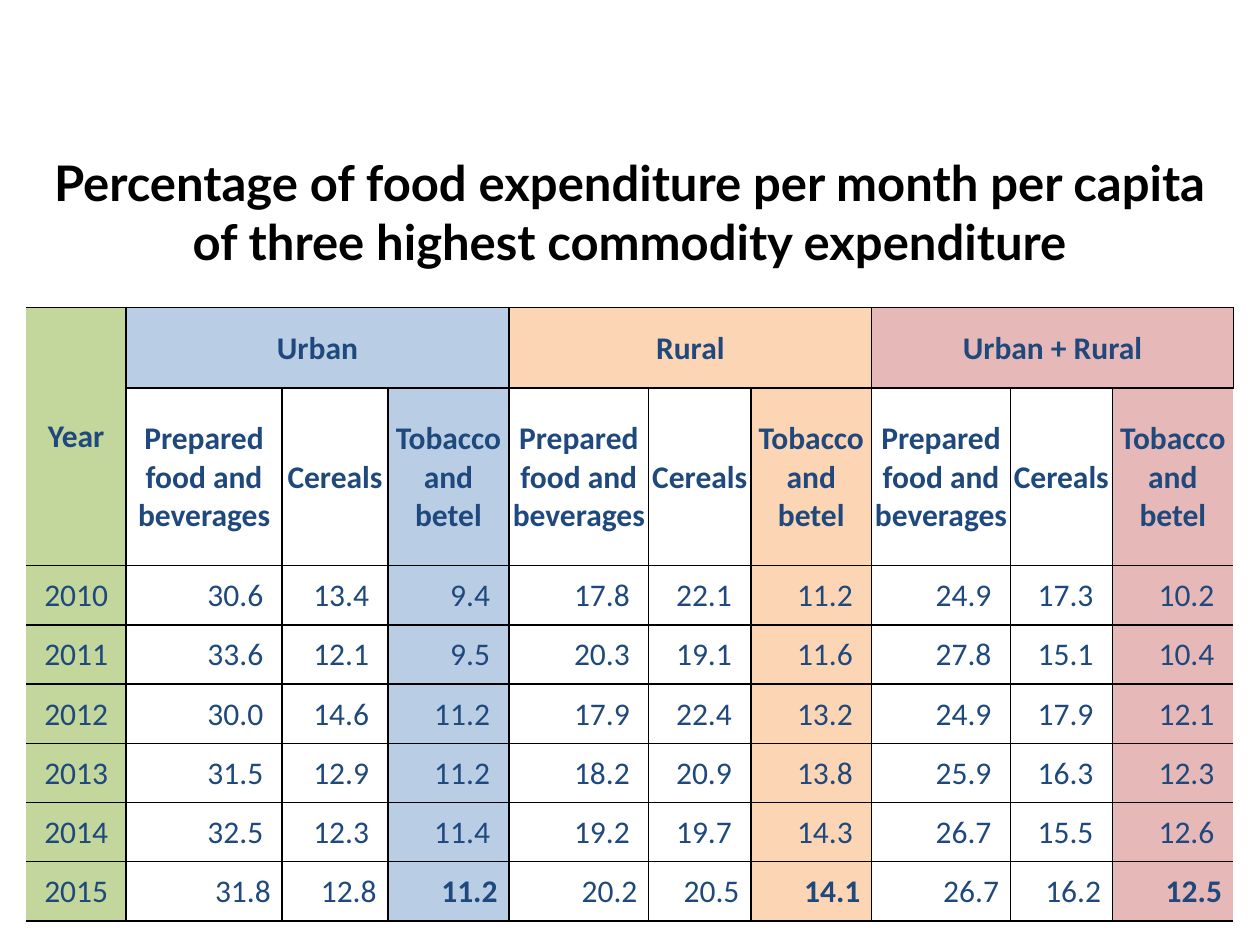
from pptx import Presentation
from pptx.dml.color import RGBColor
from pptx.enum.text import MSO_ANCHOR, PP_ALIGN
from pptx.oxml import parse_xml
from pptx.oxml.ns import nsdecls
from pptx.util import Inches, Pt

TITLE = ("Percentage of food expenditure per month per capita "
         "of three highest commodity expenditure")
GREEN, NAVY, BLACK = "C3D69B", "1F497D", "000000"
GROUPS = [("Urban", "B9CDE5"), ("Rural", "FCD5B5"), ("Urban + Rural", "E6B9B8")]
ITEMS = ["Prepared food and beverages", "Cereals", "Tobacco and betel"]
DATA = [
    (2010, 30.6, 13.4, 9.4, 17.8, 22.1, 11.2, 24.9, 17.3, 10.2),
    (2011, 33.6, 12.1, 9.5, 20.3, 19.1, 11.6, 27.8, 15.1, 10.4),
    (2012, 30.0, 14.6, 11.2, 17.9, 22.4, 13.2, 24.9, 17.9, 12.1),
    (2013, 31.5, 12.9, 11.2, 18.2, 20.9, 13.8, 25.9, 16.3, 12.3),
    (2014, 32.5, 12.3, 11.4, 19.2, 19.7, 14.3, 26.7, 15.5, 12.6),
    (2015, 31.8, 12.8, 11.2, 20.2, 20.5, 14.1, 26.7, 16.2, 12.5),
]
WIDTHS = [0.79, 1.24, 0.84, 0.96, 1.11, 0.81, 0.96, 1.1, 0.81, 0.96]
HEIGHTS = [0.64, 1.41] + [0.47] * len(DATA)


def color(code):
    """Turn a hex string into a colour."""
    return RGBColor.from_string(code)


def write(frame, text, size, face, code, bold, align):
    """Put one styled run into the first paragraph of a frame."""
    para = frame.paragraphs[0]
    para.alignment = align
    run = para.add_run()
    run.text = text
    font = run.font
    font.size, font.name, font.bold = Pt(size), face, bold
    font.color.rgb = color(code)


def add_title(slide):
    """Place and fill the title."""
    title = slide.shapes.title
    title.left, title.top = Inches(0.27), Inches(1.16)
    title.width, title.height = Inches(9.45), Inches(1.04)
    title.text_frame.word_wrap = True
    write(title.text_frame, TITLE, 28, "Lato", BLACK, True, PP_ALIGN.CENTER)


def add_edges(cell, col):
    """Rule a cell, leaving the outer sides of the table open."""
    props = cell._tc.get_or_add_tcPr()
    for side in "LRTB":
        gap = (side, col) in (("L", 0), ("R", len(WIDTHS) - 1))
        paint = "<a:noFill/>" if gap else (
            f'<a:solidFill><a:srgbClr val="{BLACK}"/></a:solidFill>')
        props.append(parse_xml(
            f'<a:ln{side} {nsdecls("a")} w="{Pt(1)}">{paint}</a:ln{side}>'))


def set_fill(cell, code):
    """Fill a cell, or clear it when no colour is given."""
    if code:
        cell.fill.solid()
        cell.fill.fore_color.rgb = color(code)
    else:
        cell.fill.background()


def put(cell, text, bold=True, align=PP_ALIGN.CENTER, right=0.01):
    """Write a cell's text with its margins."""
    cell.vertical_anchor = MSO_ANCHOR.MIDDLE
    cell.margin_left = cell.margin_top = Inches(0.01)
    cell.margin_right, cell.margin_bottom = Inches(right), 0
    write(cell.text_frame, text, 18, "Calibri", NAVY, bold, align)


def shade(row, col):
    """Give the fill of a grid position."""
    if col == 0:
        return GREEN
    group, item = divmod(col - 1, len(ITEMS))
    return GROUPS[group][1] if row == 0 or item == 2 else None


def add_grid(slide):
    """Add the empty table with its sizes, rules and fills."""
    frame = slide.shapes.add_table(
        len(HEIGHTS), len(WIDTHS), Inches(0.21), Inches(2.44),
        Inches(sum(WIDTHS)), Inches(sum(HEIGHTS)))
    table = frame.table
    table.first_row = table.horz_banding = False
    for col, width in enumerate(WIDTHS):
        table.columns[col].width = Inches(width)
    for row, height in enumerate(HEIGHTS):
        table.rows[row].height = Inches(height)
        for col in range(len(WIDTHS)):
            cell = table.cell(row, col)
            add_edges(cell, col)
            set_fill(cell, shade(row, col))
    return table


def fill_heads(table):
    """Merge and write the two header rows."""
    table.cell(0, 0).merge(table.cell(1, 0))
    put(table.cell(0, 0), "Year")
    for group, (name, _) in enumerate(GROUPS):
        first = 1 + group * len(ITEMS)
        table.cell(0, first).merge(table.cell(0, first + len(ITEMS) - 1))
        put(table.cell(0, first), name)
        for col, item in enumerate(ITEMS, first):
            put(table.cell(1, col), item)


def fill_rows(table):
    """Write the years and values, stressing the last tobacco figures."""
    for row, (year, *values) in enumerate(DATA, 2):
        last = row == len(HEIGHTS) - 1
        put(table.cell(row, 0), str(year), False)
        for col, value in enumerate(values, 1):
            put(table.cell(row, col), f"{value:.1f}", last and col % 3 == 0,
                PP_ALIGN.RIGHT, 0.09 if last else 0.15)


def main():
    """Build and save the slide."""
    deck = Presentation()
    deck.slide_width, deck.slide_height = Inches(10), Inches(7.5)
    slide = deck.slides.add_slide(deck.slide_layouts[5])
    add_title(slide)
    table = add_grid(slide)
    fill_heads(table)
    fill_rows(table)
    deck.save("out.pptx")


if __name__ == "__main__":
    main()
